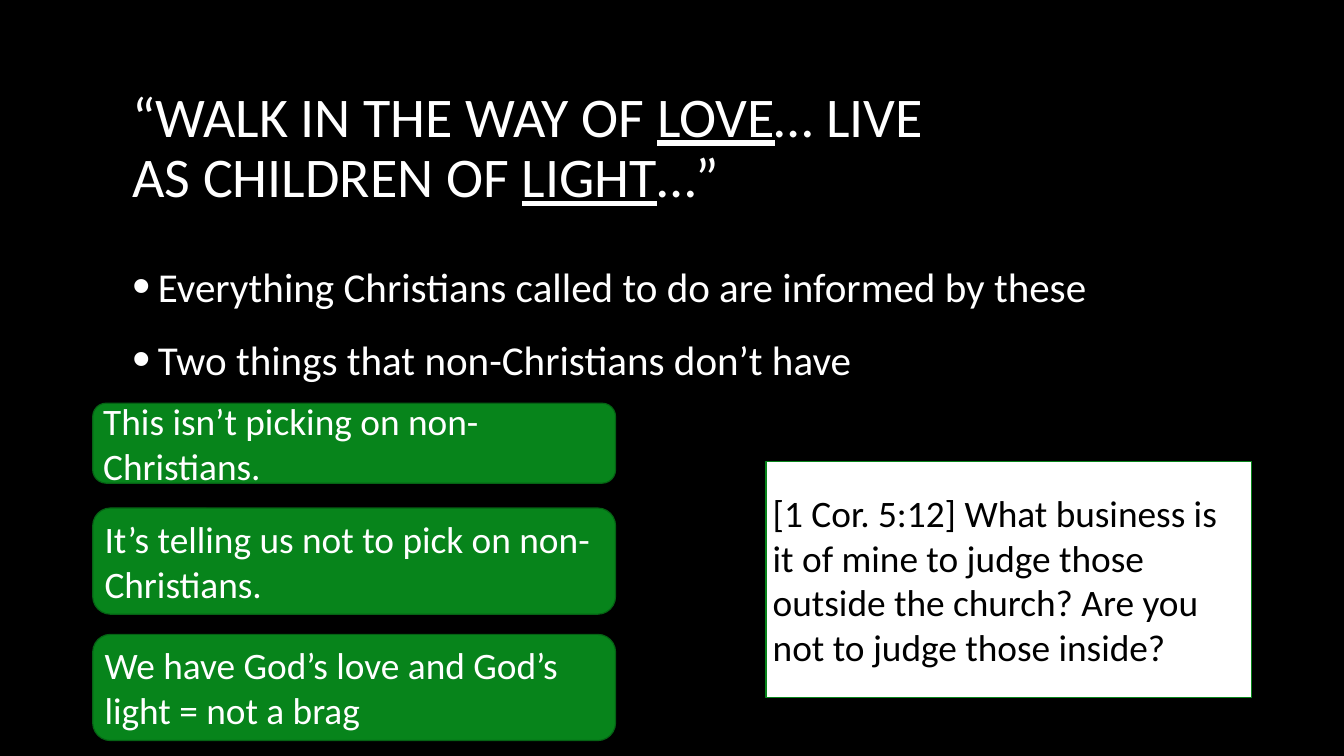
from lxml import etree
from pptx import Presentation
from pptx.dml.color import RGBColor
from pptx.enum.shapes import MSO_SHAPE
from pptx.enum.text import MSO_ANCHOR, PP_ALIGN
from pptx.oxml.ns import qn
from pptx.util import Inches, Pt

RECT, ROUNDED = MSO_SHAPE.RECTANGLE, MSO_SHAPE.ROUNDED_RECTANGLE
MIDDLE, LEFT = MSO_ANCHOR.MIDDLE, PP_ALIGN.LEFT
BLACK = RGBColor(0x00, 0x00, 0x00)
WHITE = RGBColor(0xFF, 0xFF, 0xFF)
GREEN = RGBColor(0x07, 0x84, 0x1B)
DARK_GREEN = RGBColor(0x05, 0x62, 0x14)
FONT = "Calibri"


def write(p, text, size=40, color=WHITE, underline=None, spacing=None, bullet=False):
    """Add one formatted run to paragraph p."""
    if bullet:
        pPr = p._p.get_or_add_pPr()
        pPr.set("marL", str(Inches(0.38)))
        pPr.set("indent", str(-Inches(0.38)))
        etree.SubElement(pPr, qn("a:buSzPct")).set("val", "125000")
        etree.SubElement(pPr, qn("a:buFont")).set("typeface", "Arial")
        etree.SubElement(pPr, qn("a:buChar")).set("char", "•")
    p.alignment = LEFT
    if spacing:
        p.line_spacing = spacing
    r = p.add_run()
    r.text = text
    r.font.name = FONT
    r.font.size = Pt(size)
    r.font.color.rgb = color
    r.font.underline = underline


def add_card(kind, text, left, top, width, height, fill, line, color):
    sp = s.shapes.add_shape(kind, Inches(left), Inches(top), Inches(width), Inches(height))
    sp.shadow.inherit = False
    sp.fill.solid()
    sp.fill.fore_color.rgb = fill
    sp.line.color.rgb = line
    sp.line.width = Pt(1.25)
    tf = sp.text_frame
    tf.word_wrap = True
    tf.vertical_anchor = MIDDLE
    write(tf.paragraphs[0], text, color=color)


prs = Presentation()
prs.slide_width, prs.slide_height = Inches(20), Inches(11.25)
s = prs.slides.add_slide(prs.slide_layouts[6])
s.background.fill.solid()
s.background.fill.fore_color.rgb = BLACK

# Title
tf = s.shapes.add_textbox(Inches(1.87), Inches(1.01), Inches(12.32), Inches(2.43)).text_frame
tf.word_wrap = True
tf.vertical_anchor = MIDDLE
for text, underline in [
    ("“WALK IN THE WAY OF ", None),
    ("LOVE", True),
    ("… LIVE AS CHILDREN OF ", None),
    ("LIGHT", True),
    ("…”", None),
]:
    write(tf.paragraphs[0], text, size=60, underline=underline, spacing=0.9)

# Bullets
tf = s.shapes.add_textbox(Inches(1.87), Inches(3.69), Inches(16.25), Inches(5.81)).text_frame
tf.word_wrap = True
write(tf.paragraphs[0], "Everything Christians called to do are informed by these",
      size=44, spacing=1.2, bullet=True)
p = tf.add_paragraph()
write(p, "Two things that non-Christians don’t have", size=44, spacing=1.2, bullet=True)
p.space_before = Pt(15)

# Green remarks
for text, top, height in [
    ("This isn’t picking on non-Christians.", 6, 1.19),
    ("It’s telling us not to pick on non-Christians.", 7.56, 1.58),
    ("We have God’s love and God’s light = not a brag", 9.44, 1.58),
]:
    add_card(ROUNDED, text, 1.38, top, 7.78, height, GREEN, DARK_GREEN, WHITE)

# Verse
add_card(RECT, "[1 Cor. 5:12] What business is it of mine to judge those outside the church? "
         "Are you not to judge those inside?",
         11.4, 6.87, 7.22, 3.51, WHITE, GREEN, BLACK)

prs.save("out.pptx")
